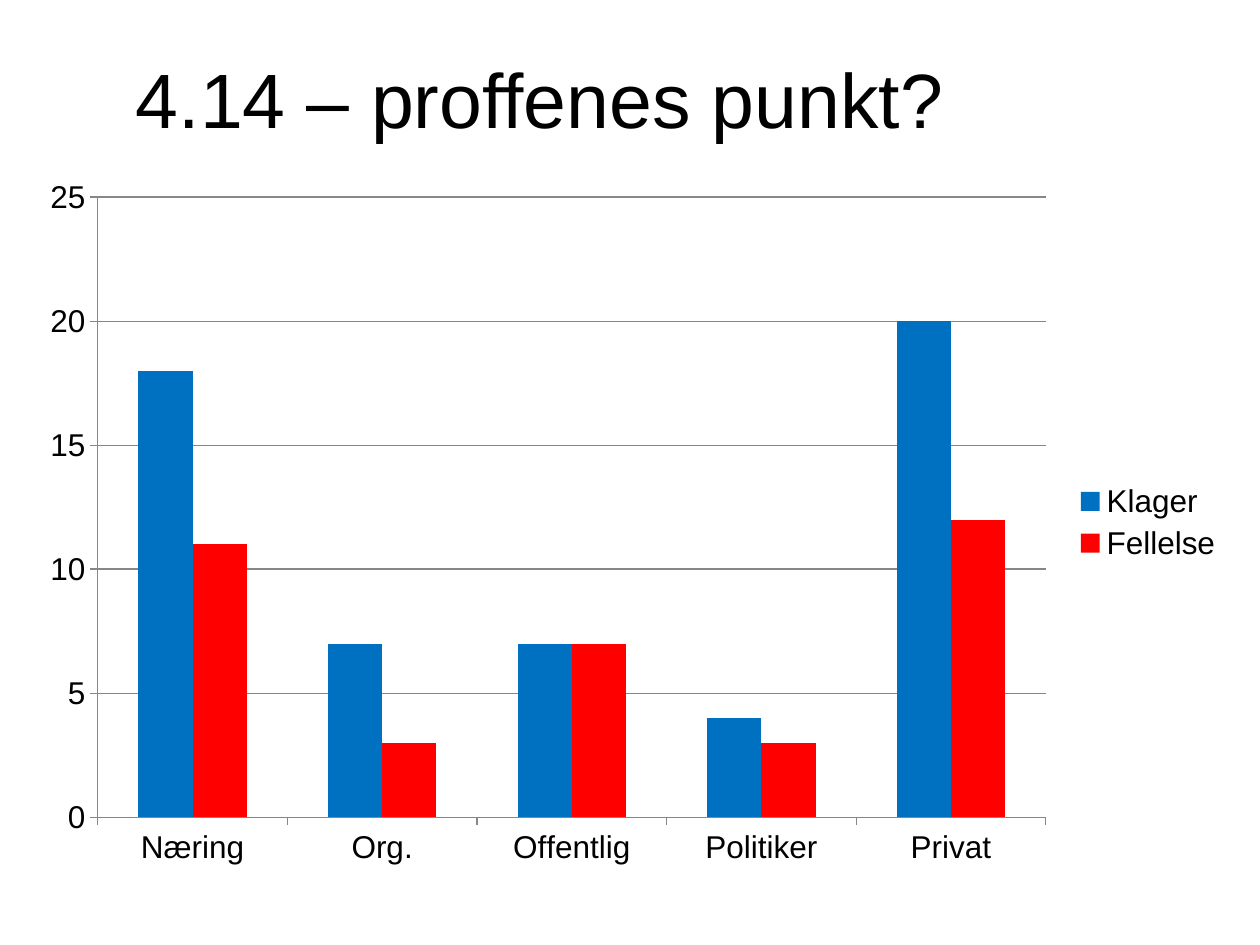
from lxml import etree
from pptx import Presentation
from pptx.chart.data import CategoryChartData
from pptx.dml.color import RGBColor
from pptx.enum.chart import XL_CHART_TYPE, XL_LEGEND_POSITION, XL_TICK_MARK
from pptx.enum.text import MSO_AUTO_SIZE
from pptx.oxml.ns import qn
from pptx.util import Inches, Pt

COLUMNS = XL_CHART_TYPE.COLUMN_CLUSTERED
LEGEND_RIGHT = XL_LEGEND_POSITION.RIGHT
TICK_OUTSIDE = XL_TICK_MARK.OUTSIDE
GROW = MSO_AUTO_SIZE.SHAPE_TO_FIT_TEXT

COLORS = {"text": "000000", "axis": "878787", "Klager": "0070C0", "Fellelse": "FF0000"}
CATEGORIES = ["Næring", "Org.", "Offentlig", "Politiker", "Privat"]
SERIES = {"Klager": [18, 7, 7, 4, 20], "Fellelse": [11, 3, 7, 3, 12]}
PLOT_LAYOUT = {"x": 0.06, "y": 0.045, "w": 0.783, "h": 0.868}


def color(name):
    """Return the named colour."""
    return RGBColor.from_string(COLORS[name])


def style_font(font, size, face="Arial"):
    """Give a font its size, face and the text colour."""
    font.size = Pt(size)
    font.name = face
    font.bold = False
    font.color.rgb = color("text")


def style_line(line):
    """Draw a thin grey axis or grid line."""
    line.color.rgb = color("axis")
    line.width = Pt(0.75)


def style_axis(axis, has_grid):
    """Style the labels, ticks and lines of an axis."""
    style_font(axis.tick_labels.font, 18)
    style_line(axis.format.line)
    axis.major_tick_mark = TICK_OUTSIDE
    axis.has_major_gridlines = has_grid
    if has_grid:
        style_line(axis.major_gridlines.format.line)


def place_plot(chart, fractions):
    """Fix the inner plot area as fractions of the chart."""
    plot_area = chart.plots[0]._element.getparent()
    for old in plot_area.findall(qn("c:layout")):
        plot_area.remove(old)
    layout = etree.Element(qn("c:layout"))
    manual = etree.SubElement(layout, qn("c:manualLayout"))
    settings = {"layoutTarget": "inner", "xMode": "edge", "yMode": "edge", **fractions}
    for tag, value in settings.items():
        etree.SubElement(manual, qn(f"c:{tag}")).set("val", str(value))
    plot_area.insert(0, layout)


def add_title(page, text):
    """Add the heading."""
    box = page.shapes.add_textbox(Inches(0.98), Inches(0.36), Inches(6.68), Inches(1.14))
    frame = box.text_frame
    frame.word_wrap = False
    frame.auto_size = GROW
    para = frame.paragraphs[0]
    para.text = text
    style_font(para.font, 44)


def add_complaints_chart(page):
    """Add the clustered columns of complaints and rulings."""
    data = CategoryChartData()
    data.categories = CATEGORIES
    for name, values in SERIES.items():
        data.add_series(name, values)
    frame = page.shapes.add_chart(
        COLUMNS, Inches(0.2), Inches(1.31), Inches(9.61), Inches(5.67), data)
    chart = frame.chart
    style_font(chart.font, 18, "Cambria")
    chart.has_title = False
    chart.has_legend = True
    chart.legend.position = LEGEND_RIGHT
    chart.legend.include_in_layout = False
    style_font(chart.legend.font, 18)
    plot = chart.plots[0]
    plot.gap_width = 150
    plot.overlap = 0
    plot.vary_by_categories = False
    for series in plot.series:
        series.format.fill.solid()
        series.format.fill.fore_color.rgb = color(series.name)
    style_axis(chart.category_axis, False)
    style_axis(chart.value_axis, True)
    chart.value_axis.minimum_scale = 0
    chart.value_axis.maximum_scale = 25
    chart.value_axis.major_unit = 5
    place_plot(chart, PLOT_LAYOUT)


def main():
    """Build and save the slide."""
    deck = Presentation()
    deck.slide_width = Inches(10)
    deck.slide_height = Inches(7.5)
    page = deck.slides.add_slide(deck.slide_layouts[6])
    add_complaints_chart(page)
    add_title(page, "4.14 – proffenes punkt?")
    deck.save("out.pptx")


if __name__ == "__main__":
    main()
